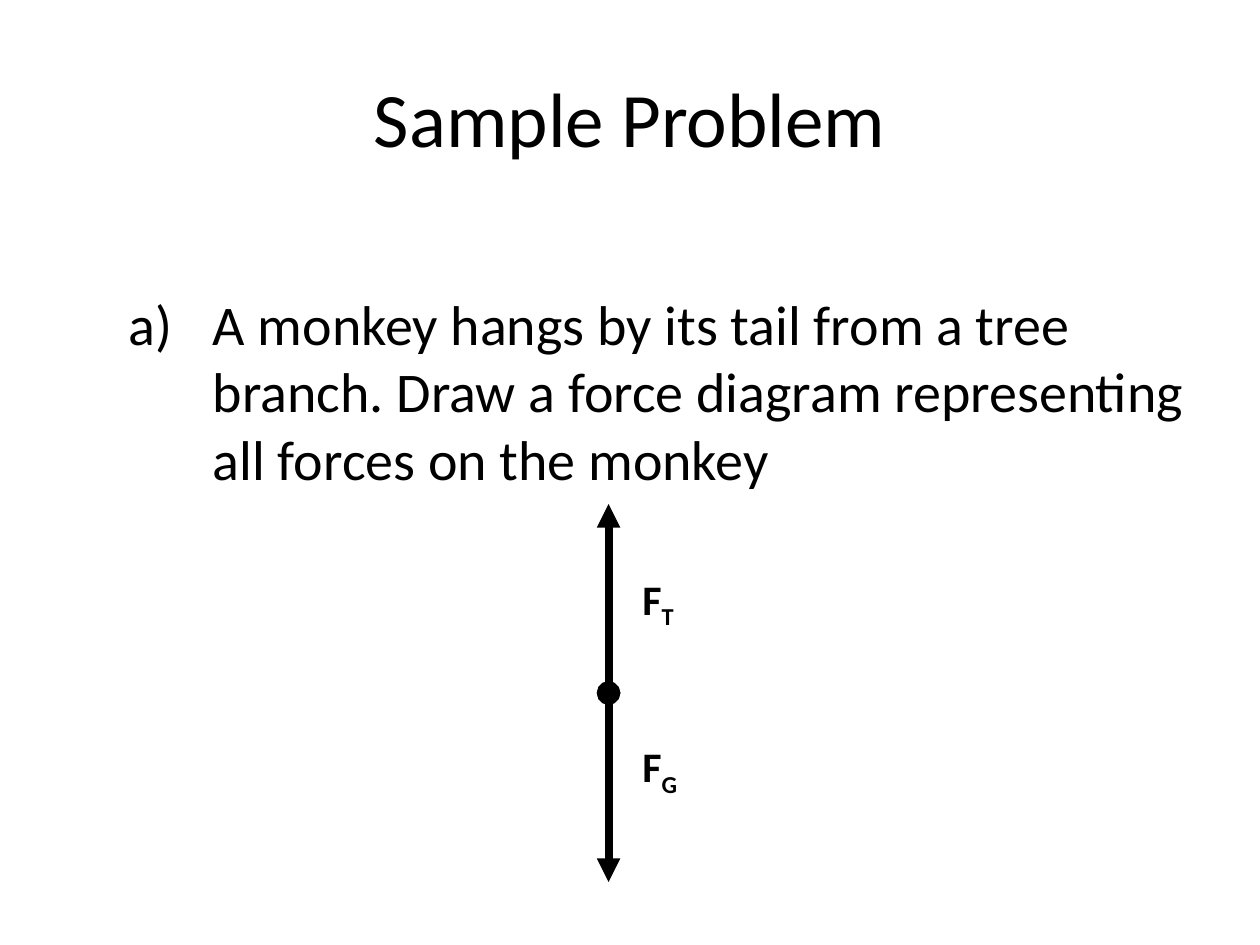
import dataclasses

import pptx
import pptx.dml.color
import pptx.enum.shapes
import pptx.enum.text
import pptx.oxml
import pptx.oxml.ns
import pptx.util

Inches = pptx.util.Inches
Pt = pptx.util.Pt
ALIGN = pptx.enum.text.PP_ALIGN
ANCHOR = pptx.enum.text.MSO_ANCHOR


@dataclasses.dataclass(frozen=True)
class Theme:
    font: str = "Calibri"
    ink: str = "000000"
    paper: str = "FFFFFF"
    title: float = 44
    body: float = 32
    label: float = 24
    arrow: float = 4.5


class Deck:
    def __init__(self, theme):
        self.theme = theme
        self.prs = pptx.Presentation()
        self.prs.slide_width, self.prs.slide_height = Inches(10), Inches(7.5)
        self.s = self.prs.slides.add_slide(self.prs.slide_layouts[6])
        fill = self.s.background.fill
        fill.solid()
        fill.fore_color.rgb = self.color(theme.paper)

    def color(self, value):
        return pptx.dml.color.RGBColor.from_string(value)

    def xml(self, parent, tag, **attributes):
        child = pptx.oxml.parse_xml(f"<a:{tag} {pptx.oxml.ns.nsdecls('a')}/>")
        for name, value in attributes.items():
            child.set(name, value)
        parent.append(child)

    def run(self, p, text, size, bold=False):
        r = p.add_run()
        r.text = text
        style = {"name": self.theme.font, "size": Pt(size), "bold": bold}
        for name, value in style.items():
            setattr(r.font, name, value)
        r.font.color.rgb = self.color(self.theme.ink)
        return r

    def text(self, box, text, size, bold=False, frame=None, para=None):
        sp = self.s.shapes.add_textbox(*map(Inches, box))
        tf = sp.text_frame
        p = tf.paragraphs[0]
        for target, style in ((tf, {"word_wrap": True} | (frame or {})), (p, para or {})):
            for name, value in style.items():
                setattr(target, name, value)
        self.run(p, text, size, bold)
        return p

    def lettered_item(self, box, text, indent):
        p = self.text(box, text, self.theme.body,
                      para={"space_before": Pt(0.2 * self.theme.body)})
        props = p._p.get_or_add_pPr()
        props.set("marL", str(Inches(indent)))
        props.set("indent", str(Inches(-indent)))
        self.xml(props, "buFont", typeface=self.theme.font)
        self.xml(props, "buAutoNum", type="alphaLcParenR")

    def force_label(self, box, subscript):
        size = self.theme.label
        p = self.text(box, "F", size, True, {
            "word_wrap": False,
            "auto_size": pptx.enum.text.MSO_AUTO_SIZE.SHAPE_TO_FIT_TEXT})
        r = self.run(p, subscript, size, True)
        r.font._element.set("baseline", "-25000")

    def force_arrow(self, start, end):
        line = self.s.shapes.add_connector(
            pptx.enum.shapes.MSO_CONNECTOR.STRAIGHT, *map(Inches, start + end))
        line.line.color.rgb = self.color(self.theme.ink)
        line.line.width = Pt(self.theme.arrow)
        ln = line.line._get_or_add_ln()
        self.xml(ln, "headEnd", type="oval")
        self.xml(ln, "tailEnd", type="triangle")
        self.xml(line._element.spPr, "effectLst")


def main():
    theme = Theme()
    deck = Deck(theme)

    # Title and problem statement
    deck.text((0.5, 0.3, 9, 1.25), "Sample Problem", theme.title,
              frame={"vertical_anchor": ANCHOR.MIDDLE},
              para={"alignment": ALIGN.CENTER})
    deck.lettered_item(
        (0.92, 2.25, 8.92, 4.5),
        "A monkey hangs by its tail from a tree branch. "
        "Draw a force diagram representing all forces on the monkey", 0.67)

    # Force diagram: tension up and gravity down from one point
    x, y, length = 4.83, 5.5, 1.5
    for subscript, direction, label_top in (("T", -1, 4.5), ("G", 1, 5.83)):
        deck.force_arrow((x, y), (x, y + direction * length))
        deck.force_label((5, label_top, 0.56, 0.5), subscript)

    deck.prs.save("out.pptx")


if __name__ == "__main__":
    main()
